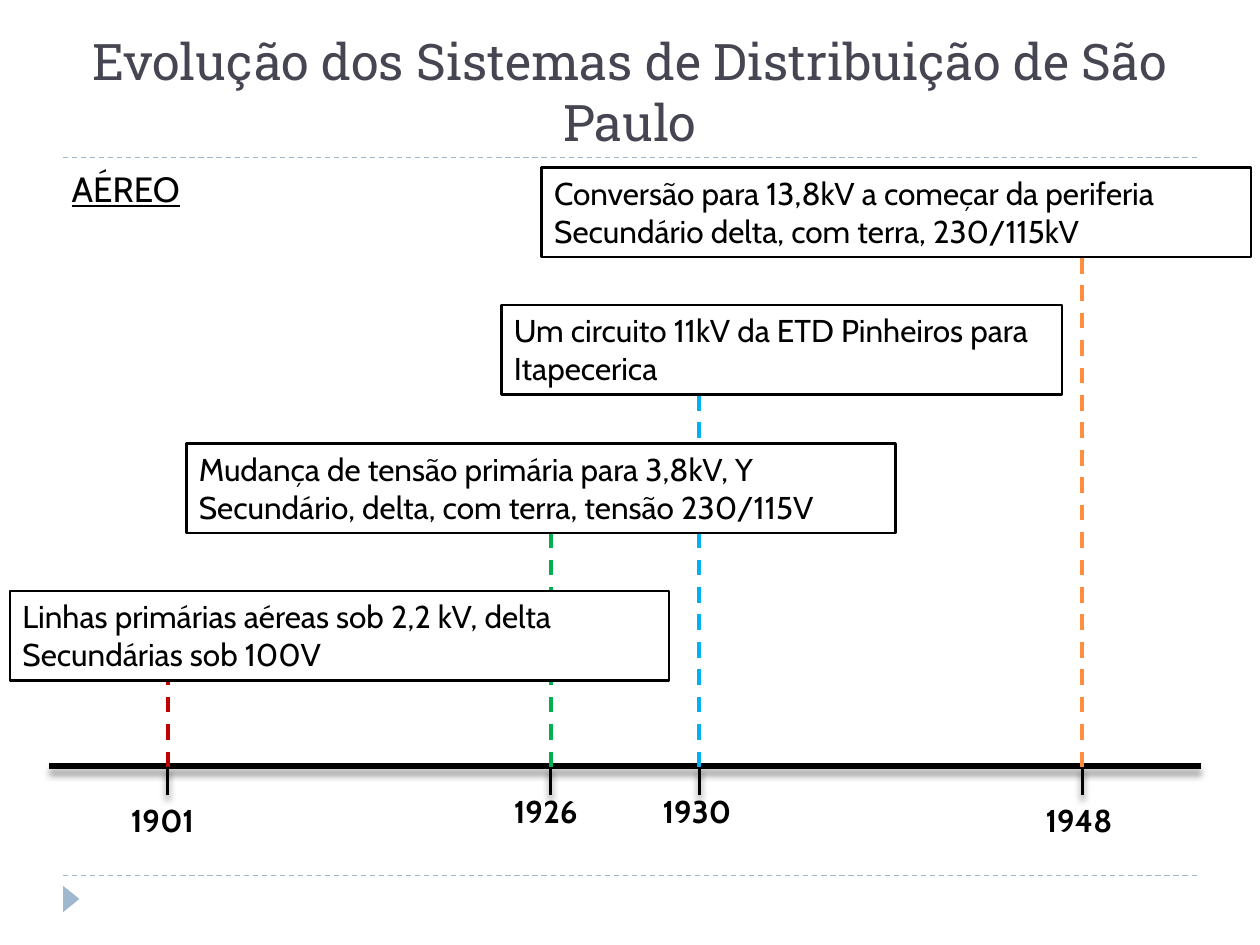
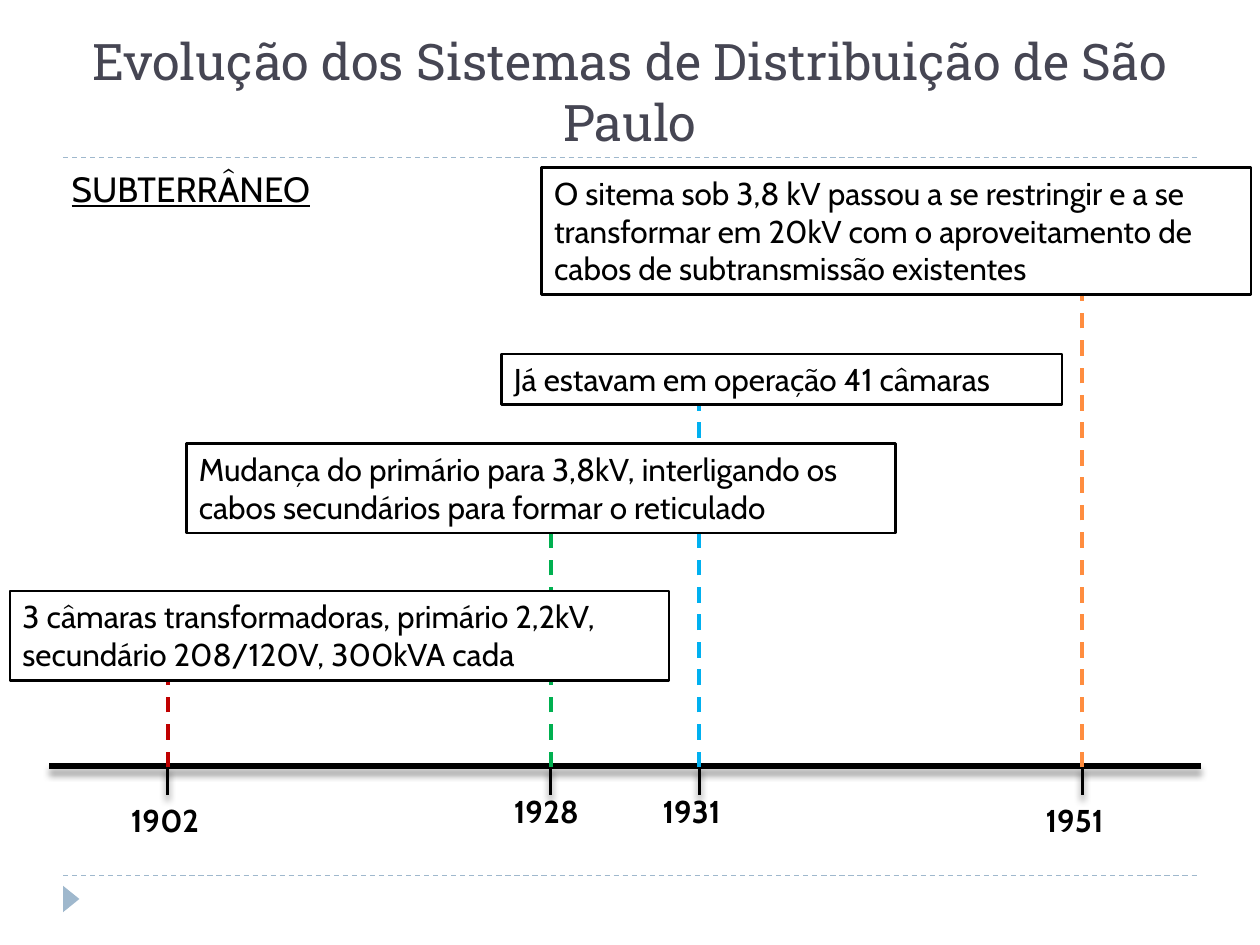
from lxml import etree
from pptx import Presentation
from pptx.dml.color import RGBColor
from pptx.enum.dml import MSO_LINE_DASH_STYLE as DASH
from pptx.enum.shapes import MSO_CONNECTOR, MSO_SHAPE
from pptx.enum.text import MSO_ANCHOR, MSO_AUTO_SIZE, PP_ALIGN
from pptx.oxml.ns import qn
from pptx.util import Inches, Pt

BLACK = RGBColor(0x00, 0x00, 0x00)
WHITE = RGBColor(0xFF, 0xFF, 0xFF)
TITLE_GRAY = RGBColor(0x46, 0x46, 0x53)
PALE_BLUE = RGBColor(0x9F, 0xB8, 0xCD)
RED = RGBColor(0xC0, 0x00, 0x00)
GREEN = RGBColor(0x00, 0xB0, 0x50)
BLUE = RGBColor(0x00, 0xB0, 0xF0)
ORANGE = RGBColor(0xFF, 0x8D, 0x3F)

TITLE = "Evolução dos Sistemas de Distribuição de São Paulo"
TITLE_FONT = "Roboto Slab"
BODY_FONT = "Cabin"
AXIS_Y = 6.08
TICK_END = 6.31

# stem x, stem colour, year label top, box left, box width
MILESTONES = [
    (1.33, RED, 6.31, 0.08, 5.23),
    (4.37, GREEN, 6.24, 1.48, 5.63),
    (5.55, BLUE, 6.24, 3.98, 4.45),
    (8.59, ORANGE, 6.31, 4.3, 5.63),
]

# year, stem top, box top, box height, box text
TIMELINES = [
    ("AÉREO", 2.11, [
        ("1901", 5.23, 4.69, 0.71,
         "Linhas primárias aéreas sob 2,2 kV, delta\nSecundárias sob 100V"),
        ("1926", 3.83, 3.52, 0.71,
         "Mudança de tensão primária para 3,8kV, Y\n"
         "Secundário, delta, com terra, tensão 230/115V"),
        ("1930", 2.66, 2.42, 0.71,
         "Um circuito 11kV da ETD Pinheiros para Itapecerica"),
        ("1948", 2.03, 1.33, 0.71,
         "Conversão para 13,8kV a começar da periferia\n"
         "Secundário delta, com terra, 230/115kV"),
    ]),
    ("SUBTERRÂNEO", 2.42, [
        ("1902", 5.23, 4.69, 0.71,
         "3 câmaras transformadoras, primário 2,2kV, "
         "secundário 208/120V, 300kVA cada"),
        ("1928", 3.83, 3.52, 0.71,
         "Mudança do primário para 3,8kV, interligando os "
         "cabos secundários para formar o reticulado"),
        ("1931", 2.89, 2.81, 0.4, "Já estavam em operação 41 câmaras"),
        ("1951", 2.03, 1.33, 1.01,
         "O sitema sob 3,8 kV passou a se restringir e a se transformar em "
         "20kV com o aproveitamento de cabos de subtransmissão existentes"),
    ]),
]


def add_line(slide, x1, y1, x2, y2, color, width, dashed=False, shadow=False):
    line = slide.shapes.add_connector(
        MSO_CONNECTOR.STRAIGHT, Inches(x1), Inches(y1), Inches(x2), Inches(y2))
    line.line.color.rgb = color
    line.line.width = Pt(width)
    if dashed:
        line.line.dash_style = DASH.DASH
    effects = etree.SubElement(line._element.spPr, qn("a:effectLst"))
    if shadow:
        outer = etree.SubElement(
            effects, qn("a:outerShdw"), blurRad=str(Pt(4)), dist=str(Pt(3.4)),
            dir="5400000", rotWithShape="0")
        black = etree.SubElement(outer, qn("a:srgbClr"), val=str(BLACK))
        etree.SubElement(black, qn("a:alpha"), val="40000")


def write_text(shape, text, size, bold=False, underline=False):
    frame = shape.text_frame
    frame.text = text
    frame.word_wrap = True
    frame.auto_size = MSO_AUTO_SIZE.SHAPE_TO_FIT_TEXT
    frame.vertical_anchor = MSO_ANCHOR.TOP
    for paragraph in frame.paragraphs:
        paragraph.alignment = PP_ALIGN.LEFT
        paragraph.font.name = BODY_FONT
        paragraph.font.size = Pt(size)
        paragraph.font.color.rgb = BLACK
        paragraph.font.bold = bold
        paragraph.font.underline = underline


presentation = Presentation()
presentation.slide_width = Inches(10)
presentation.slide_height = Inches(7.5)

for heading, heading_width, events in TIMELINES:
    slide = presentation.slides.add_slide(presentation.slide_layouts[5])

    for rule_y in (6.95, 1.25):
        add_line(slide, 0.5, rule_y, 9.5, rule_y, PALE_BLUE, 0.75, dashed=True)
    marker = slide.shapes.add_shape(
        MSO_SHAPE.ISOSCELES_TRIANGLE,
        Inches(0.46), Inches(7.07), Inches(0.21), Inches(0.13))
    marker.rotation = 90
    marker.shadow.inherit = False
    marker.fill.solid()
    marker.fill.fore_color.rgb = PALE_BLUE
    marker.line.fill.background()

    title = slide.shapes.title
    title.left, title.top = Inches(0.5), Inches(0.17)
    title.width, title.height = Inches(9), Inches(1.08)
    title.text_frame.text = TITLE
    title.text_frame.auto_size = MSO_AUTO_SIZE.NONE
    title.text_frame.vertical_anchor = MSO_ANCHOR.BOTTOM
    paragraph = title.text_frame.paragraphs[0]
    paragraph.alignment = PP_ALIGN.CENTER
    paragraph.font.name = TITLE_FONT
    paragraph.font.size = Pt(28.8)
    paragraph.font.color.rgb = TITLE_GRAY

    add_line(slide, 0.39, AXIS_Y, 9.53, AXIS_Y, BLACK, 3, shadow=True)
    for x, *_ in MILESTONES:
        add_line(slide, x, AXIS_Y, x, TICK_END, BLACK, 2, shadow=True)

    for (x, color, year_top, *_), (year, stem_top, *_) in zip(MILESTONES, events):
        add_line(slide, x, 6.09, x, stem_top, color, 2.25, dashed=True)
        label = slide.shapes.add_textbox(
            Inches(x - 0.39), Inches(year_top), Inches(1.09), Inches(0.4))
        write_text(label, year, 18, bold=True)

    label = slide.shapes.add_textbox(
        Inches(0.47), Inches(1.28), Inches(heading_width), Inches(0.44))
    write_text(label, heading, 20, underline=True)

    for (*_, left, width), (*_, top, height, text) in zip(MILESTONES, events):
        box = slide.shapes.add_shape(
            MSO_SHAPE.RECTANGLE,
            Inches(left), Inches(top), Inches(width), Inches(height))
        box.shadow.inherit = False
        box.fill.solid()
        box.fill.fore_color.rgb = WHITE
        box.line.color.rgb = BLACK
        box.line.width = Pt(1.5)
        write_text(box, text, 18)

presentation.save("out.pptx")
